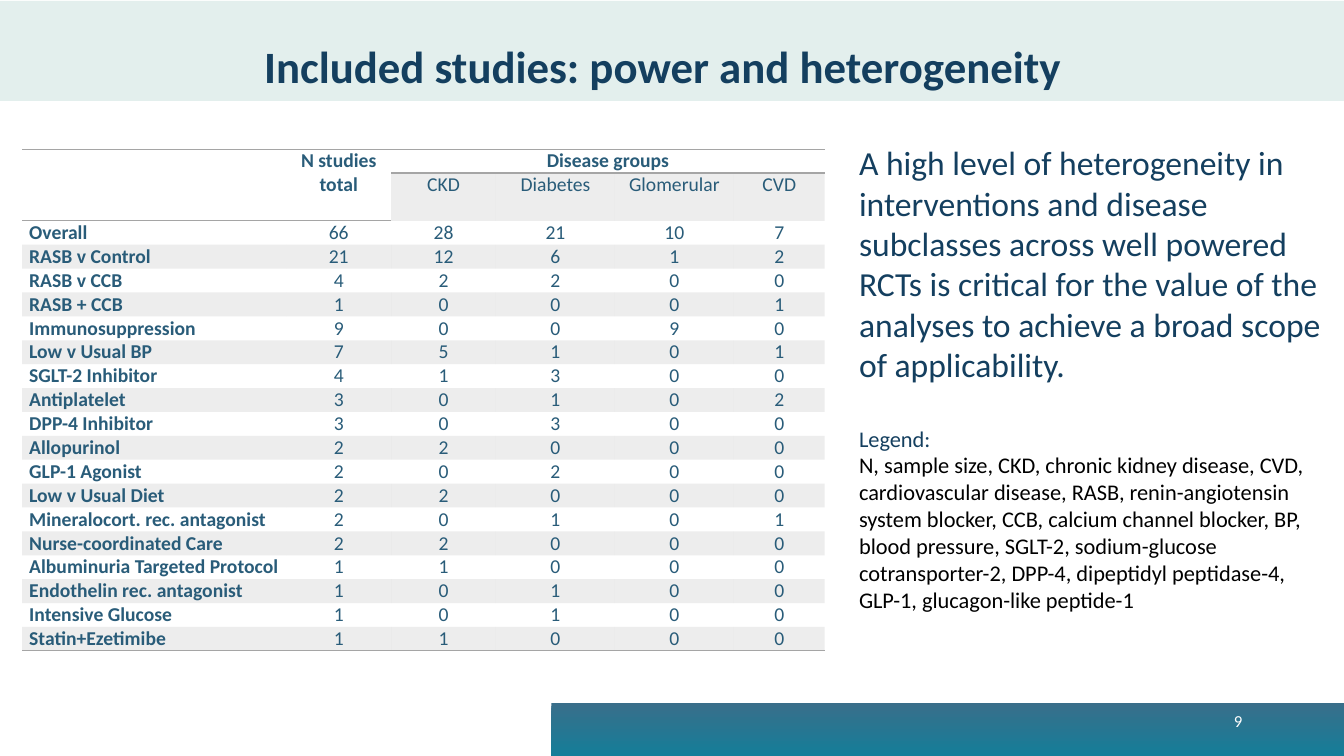
from dataclasses import dataclass

from lxml import etree
from pptx import Presentation
from pptx.dml.color import RGBColor
from pptx.enum.shapes import MSO_SHAPE
from pptx.enum.text import MSO_ANCHOR, MSO_AUTO_SIZE, PP_ALIGN
from pptx.oxml.ns import qn
from pptx.util import Inches, Pt

RECTANGLE = MSO_SHAPE.RECTANGLE
TOP, MIDDLE = MSO_ANCHOR.TOP, MSO_ANCHOR.MIDDLE
NO_AUTOFIT = MSO_AUTO_SIZE.NONE
LEFT, CENTER, RIGHT = PP_ALIGN.LEFT, PP_ALIGN.CENTER, PP_ALIGN.RIGHT

NAVY = RGBColor(0x14, 0x3F, 0x5F)
TABLE_BLUE = RGBColor(0x29, 0x5C, 0x79)
GREY = RGBColor(0xA5, 0xA5, 0xA5)
GREEN = RGBColor(0x29, 0x84, 0x7B)
FOOTER_TOP = RGBColor(0x39, 0x6E, 0x8A)
FOOTER_BOTTOM = RGBColor(0x15, 0x7E, 0x99)
BLACK = RGBColor(0, 0, 0)
WHITE = RGBColor(255, 255, 255)

FONT = "Calibri"
NO_TABLE_STYLE = "{2D5ABB26-0587-4C30-8999-92F81FD0307C}"
COLUMN_WIDTHS = (2.62, 1.04, 1.04, 1.18, 1.18, 0.9)
ROW_HEIGHT = 0.23
TABLE_TEXT_SIZE = 14


@dataclass(frozen=True)
class Intervention:
    name: str
    counts: tuple[int, ...]  # total, CKD, diabetes, glomerular, CVD


@dataclass(frozen=True)
class BodyText:
    text: str
    size: int
    color: RGBColor
    space_before: int = 0


INTERVENTIONS = (
    Intervention("Overall", (66, 28, 21, 10, 7)),
    Intervention("RASB v Control", (21, 12, 6, 1, 2)),
    Intervention("RASB v CCB", (4, 2, 2, 0, 0)),
    Intervention("RASB + CCB", (1, 0, 0, 0, 1)),
    Intervention("Immunosuppression", (9, 0, 0, 9, 0)),
    Intervention("Low v Usual BP", (7, 5, 1, 0, 1)),
    Intervention("SGLT-2 Inhibitor", (4, 1, 3, 0, 0)),
    Intervention("Antiplatelet", (3, 0, 1, 0, 2)),
    Intervention("DPP-4 Inhibitor", (3, 0, 3, 0, 0)),
    Intervention("Allopurinol", (2, 2, 0, 0, 0)),
    Intervention("GLP-1 Agonist", (2, 0, 2, 0, 0)),
    Intervention("Low v Usual Diet", (2, 2, 0, 0, 0)),
    Intervention("Mineralocort. rec. antagonist", (2, 0, 1, 0, 1)),
    Intervention("Nurse-coordinated Care", (2, 2, 0, 0, 0)),
    Intervention("Albuminuria Targeted Protocol", (1, 1, 0, 0, 0)),
    Intervention("Endothelin rec. antagonist", (1, 0, 1, 0, 0)),
    Intervention("Intensive Glucose", (1, 0, 1, 0, 0)),
    Intervention("Statin+Ezetimibe", (1, 1, 0, 0, 0)),
)
HEADER_ROWS = (
    ("", "N studies\ntotal", "Disease groups", "", "", ""),
    ("", "", "CKD", "Diabetes", "Glomerular", "CVD"),
)
BODY_TEXTS = (
    BodyText("A high level of heterogeneity in interventions and disease subclasses "
             "across well powered RCTs is critical for the value of the analyses to "
             "achieve a broad scope of applicability.", 24, NAVY),
    BodyText("Legend:", 16, NAVY, space_before=29),
    BodyText("N, sample size, CKD, chronic kidney disease, CVD, cardiovascular disease, "
             "RASB, renin-angiotensin system blocker, CCB, calcium channel blocker, BP, "
             "blood pressure, SGLT-2, sodium-glucose cotransporter-2, DPP-4, dipeptidyl "
             "peptidase-4, GLP-1, glucagon-like peptide-1", 16, BLACK),
)


def place(shape, left: float, top: float, width: float, height: float) -> None:
    shape.left, shape.top = Inches(left), Inches(top)
    shape.width, shape.height = Inches(width), Inches(height)


def format_paragraph(paragraph, size: int, color: RGBColor, align, bold: bool = False) -> None:
    paragraph.alignment = align
    for run in paragraph.runs:
        run.font.name = FONT
        run.font.size = Pt(size)
        run.font.bold = bold
        run.font.color.rgb = color


def set_alpha(fill, percent: int) -> None:
    """Make a solid RGB fill partly transparent."""
    color = fill._xPr.find(qn("a:solidFill")).find(qn("a:srgbClr"))
    etree.SubElement(color, qn("a:alpha")).set("val", str(percent * 1000))


def add_band(slide, left: float, top: float, width: float, height: float):
    """Add an unlined rectangle behind everything else."""
    band = slide.shapes.add_shape(RECTANGLE, Inches(left), Inches(top),
                                  Inches(width), Inches(height))
    band.shadow.inherit = False
    band.line.fill.background()
    slide.shapes._spTree.insert(2, band._element)
    return band


def add_border(cell, side: str) -> None:
    properties = cell._tc.get_or_add_tcPr()
    line = etree.SubElement(properties, qn(f"a:ln{side}"), w=str(Pt(1)))
    solid_fill = etree.SubElement(line, qn("a:solidFill"))
    etree.SubElement(solid_fill, qn("a:srgbClr"), val=str(GREY))


def format_cell(cell, text: str, align, bold: bool, shaded: bool, borders: str) -> None:
    cell.text_frame.text = text
    cell.margin_left = cell.margin_right = Inches(0.07)
    cell.margin_top = cell.margin_bottom = 0
    for paragraph in cell.text_frame.paragraphs:
        format_paragraph(paragraph, TABLE_TEXT_SIZE, TABLE_BLUE, align, bold)
        if not text:
            etree.SubElement(paragraph._p, qn("a:endParaRPr"), sz=str(TABLE_TEXT_SIZE * 100))
    for side in borders:
        add_border(cell, side)
    if shaded:
        cell.fill.solid()
        cell.fill.fore_color.rgb = GREY
        set_alpha(cell.fill, 20)
    else:
        cell.fill.background()


def add_studies_table(slide) -> None:
    rows = HEADER_ROWS + tuple((item.name, *map(str, item.counts)) for item in INTERVENTIONS)
    frame = slide.shapes.add_table(len(rows), len(COLUMN_WIDTHS), Inches(0.22), Inches(1.48),
                                   Inches(sum(COLUMN_WIDTHS)), Inches(ROW_HEIGHT * len(rows)))
    table = frame.table
    table.first_row = table.horz_banding = False
    table._tbl.tblPr.find(qn("a:tableStyleId")).text = NO_TABLE_STYLE
    for column, width in zip(table.columns, COLUMN_WIDTHS):
        column.width = Inches(width)
    for row in table.rows:
        row.height = Inches(ROW_HEIGHT)
    table.rows[1].height = Inches(0.47)

    for row_index, texts in enumerate(rows):
        is_header = row_index < len(HEADER_ROWS)
        borders = "TB" if row_index == 0 else "B" if row_index == len(rows) - 1 else ""
        for column_index, text in enumerate(texts):
            is_name = column_index == 0 and not is_header
            shaded = row_index % 2 == 1 and (not is_header or column_index >= 2)
            format_cell(table.cell(row_index, column_index), text, LEFT if is_name else CENTER,
                        is_name or row_index == 0, shaded, borders)
    for column_index in (0, 1):
        table.cell(0, column_index).merge(table.cell(1, column_index))
    table.cell(0, 2).merge(table.cell(0, 5))


def fill_title(title) -> None:
    place(title, 0.17, 0.33, 12.81, 0.64)
    title.text_frame.text = "Included studies: power and heterogeneity"
    title.text_frame.auto_size = NO_AUTOFIT
    title.text_frame.vertical_anchor = MIDDLE
    format_paragraph(title.text_frame.paragraphs[0], 32, NAVY, CENTER, bold=True)


def fill_body(body) -> None:
    place(body, 8.42, 1.36, 4.92, 4.81)
    frame = body.text_frame
    frame.text = "\n".join(item.text for item in BODY_TEXTS)
    frame.auto_size = NO_AUTOFIT
    frame.vertical_anchor = TOP
    for paragraph, item in zip(frame.paragraphs, BODY_TEXTS):
        properties = paragraph._p.get_or_add_pPr()
        properties.set("marL", "0")
        properties.set("indent", "0")
        etree.SubElement(properties, qn("a:buNone"))
        paragraph.space_before = Pt(item.space_before)
        format_paragraph(paragraph, item.size, item.color, LEFT)


def add_page_number(slide) -> None:
    box = slide.shapes.add_textbox(Inches(9.42), Inches(6.95), Inches(3), Inches(0.4))
    box.text_frame.word_wrap = True
    box.text_frame.vertical_anchor = MIDDLE
    box.text_frame.text = "9"
    format_paragraph(box.text_frame.paragraphs[0], 12, WHITE, RIGHT)


def main() -> None:
    presentation = Presentation()
    presentation.slide_width, presentation.slide_height = Inches(13.33), Inches(7.5)
    slide = presentation.slides.add_slide(presentation.slide_layouts[1])

    title_band = add_band(slide, 0, 0.01, 13.33, 0.99)
    title_band.fill.solid()
    title_band.fill.fore_color.rgb = GREEN
    set_alpha(title_band.fill, 13)

    footer_band = add_band(slide, 5.47, 6.97, 7.86, 0.53)
    footer_band.fill.gradient()
    footer_band.fill.gradient_angle = 270
    for stop, color in zip(footer_band.fill.gradient_stops, (FOOTER_TOP, FOOTER_BOTTOM)):
        stop.color.rgb = color

    fill_title(slide.shapes.title)
    add_studies_table(slide)
    fill_body(slide.placeholders[1])
    add_page_number(slide)
    presentation.save("out.pptx")


if __name__ == "__main__":
    main()
